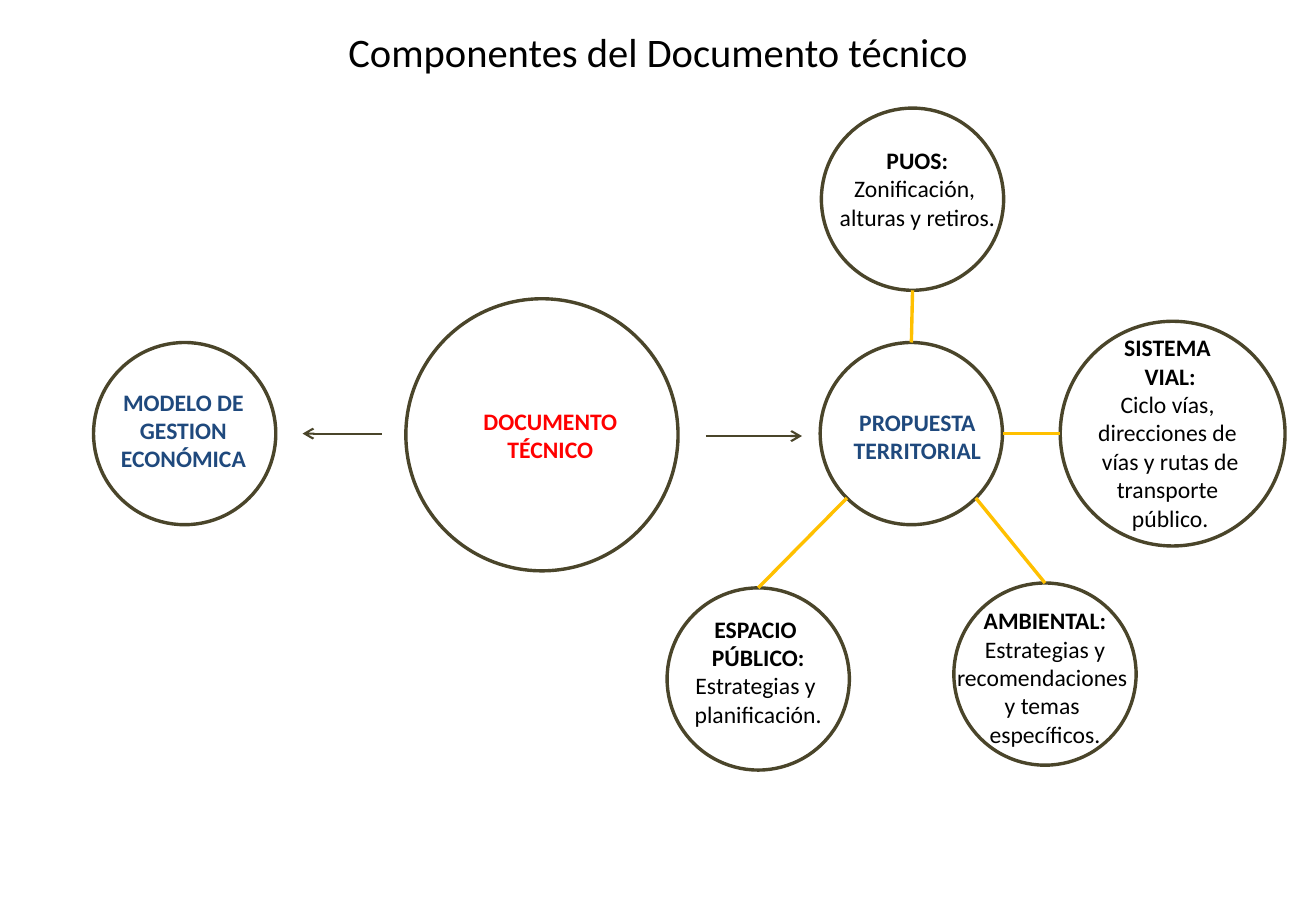
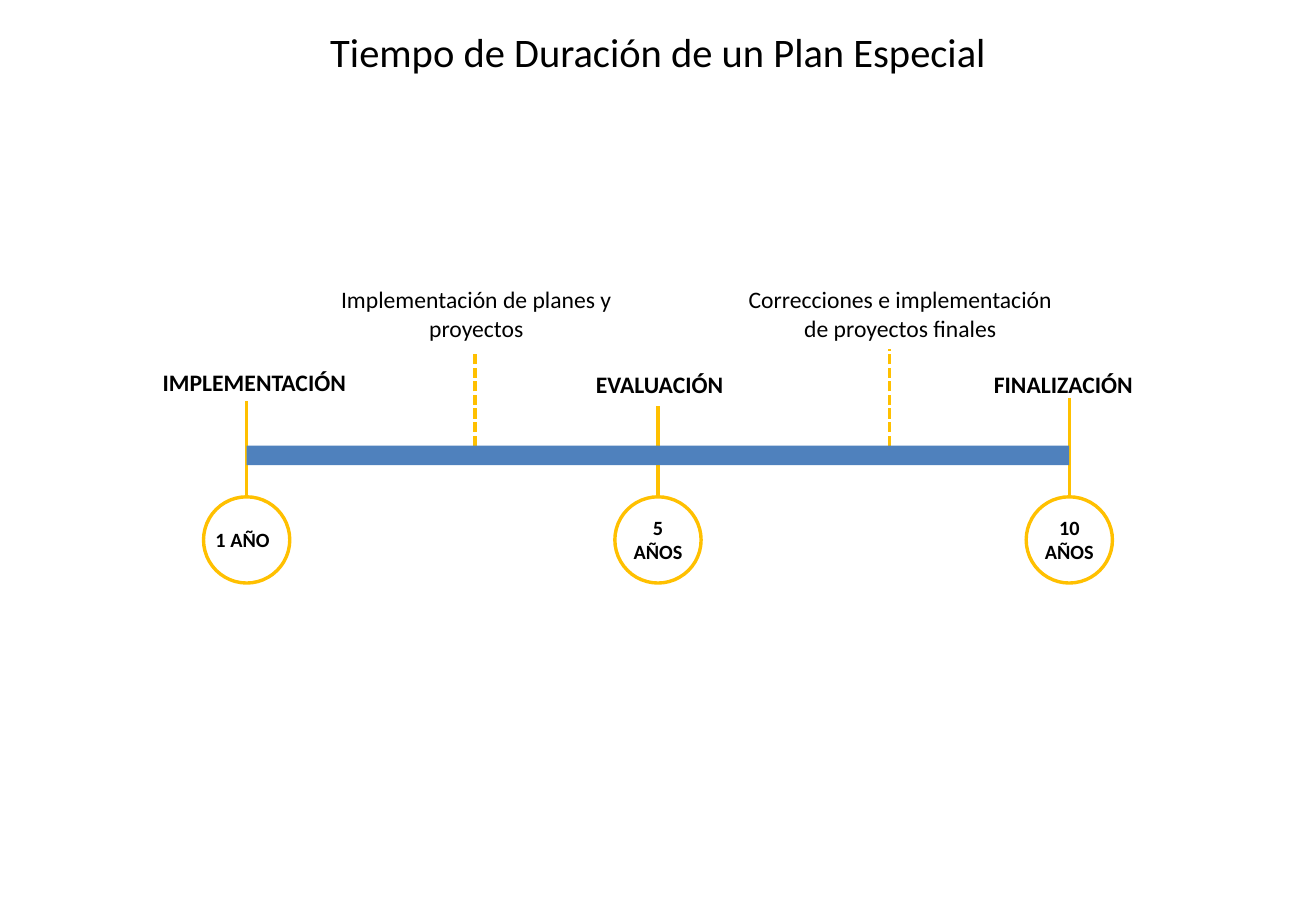
from collections import namedtuple
from math import cos, radians, sin

from lxml import etree
from pptx import Presentation
from pptx.dml.color import RGBColor
from pptx.enum import dml, shapes, text
from pptx.oxml import ns
from pptx.util import Inches, Pt

COLORS = {
    "black": "000000", "red": "FF0000", "navy": "1F497D",
    "olive": "4A452A", "gold": "FFC000", "blue": "4F81BD",
}
FONT = "Calibri"
CENTER, LEFT = text.PP_ALIGN.CENTER, text.PP_ALIGN.LEFT
Box = namedtuple("Box", "left top width height")
Circle = namedtuple("Circle", "x y diameter")
Node = namedtuple("Node", "dx dy diameter label_dx label_top label_width rows")

TITLE = Box(0.69, 0.16, 9.45, 0.52)
MAIN_NODES = [
    (Node(-3.04, 0.01, 2.24, 0.07, 0.84, 1.8, 2), ["DOCUMENTO TÉCNICO"], "red"),
    (Node(-5.98, 0, 1.5, -0.01, 0.32, 1.8, 3), ["MODELO DE GESTION ECONÓMICA"], "navy"),
]
HUB_NODE = Node(0, 0, 1.5, 0.05, 0.49, 1.8, 2)
SATELLITES = [
    (Node(0.01, -1.93, 1.5, 0.04, 0.26, 2.43, 3), 1, -90, 90,
     ["PUOS:", "Zonificación, ", "alturas y retiros."]),
    (Node(2.15, 0, 1.85, -0.02, 0.05, 2.05, 7), 2, 0, 180,
     ["SISTEMA ", "VIAL:", "Ciclo vías, ", "direcciones de ",
      "vías y rutas de transporte ", "público."]),
    (Node(-1.26, 2.02, 1.5, 0, 0.17, 2.43, 4), 2, 135, -90,
     ["ESPACIO ", "PÚBLICO:", "Estrategias y ", "planificación."]),
    (Node(1.1, 1.98, 1.5, 0, 0.14, 2.43, 5), 1, 45, -90,
     ["AMBIENTAL:", "Estrategias y recomendaciones ", "y temas ", "específicos."]),
]
ARROWS = [(-1.69, -0.9, 0.02), (-4.36, -5.01, 0)]


def color(name):
    return RGBColor.from_string(COLORS[name])


def add_label(page, box, lines, size=14, tone="black", bold_lines=0,
              align=CENTER, insets=(0.1, 0.05)):
    label = page.shapes.add_textbox(*map(Inches, box))
    frame = label.text_frame
    frame.text = "\n".join(lines)
    frame.word_wrap = True
    frame.auto_size = text.MSO_AUTO_SIZE.SHAPE_TO_FIT_TEXT
    frame.margin_left = frame.margin_right = Inches(insets[0])
    frame.margin_top = frame.margin_bottom = Inches(insets[1])
    for index, para in enumerate(frame.paragraphs):
        para.alignment = align
        for span in para.runs:
            span.font.name = FONT
            span.font.size = Pt(size)
            span.font.bold = index < bold_lines
            span.font.color.rgb = color(tone)


def add_circle(page, circle, tone):
    x, y, diameter = circle
    corner = (x - diameter / 2, y - diameter / 2, diameter, diameter)
    ring = page.shapes.add_shape(shapes.MSO_SHAPE.OVAL, *map(Inches, corner))
    ring.shadow.inherit = False
    ring.fill.background()
    ring.line.color.rgb = color(tone)
    ring.line.width = Pt(2)
    return ring


def add_line(page, start, end, tone="gold", width=2, dashed=False, arrow=False):
    line = page.shapes.add_connector(
        shapes.MSO_CONNECTOR.STRAIGHT, *map(Inches, (*start, *end)))
    line.line.color.rgb = color(tone)
    line.line.width = Pt(width)
    if dashed:
        line.line.dash_style = dml.MSO_LINE.SQUARE_DOT
    if arrow:
        outline = line.line._get_or_add_ln()
        etree.SubElement(outline, ns.qn("a:tailEnd"), type="arrow")
    etree.SubElement(line._element.spPr, ns.qn("a:effectLst"))
    return line


def add_page(deck, title):
    page = deck.slides.add_slide(deck.slide_layouts[6])
    add_label(page, TITLE, [title], size=24, insets=(0.12, 0.06))
    return page


def rim(circle, angle):
    radius = circle.diameter / 2
    return (circle.x + radius * cos(radians(angle)),
            circle.y + radius * sin(radians(angle)))


def add_node(page, x, y, node, lines, tone="black", bold_lines=1):
    circle = Circle(x + node.dx, y + node.dy, node.diameter)
    add_circle(page, circle, "olive")
    box = Box(circle.x + node.label_dx - node.label_width / 2,
              circle.y - node.diameter / 2 + node.label_top,
              node.label_width, 0.1 + 0.235 * node.rows)
    add_label(page, box, lines, tone=tone, bold_lines=bold_lines)
    return circle


def draw_components(page, x, y):
    for node, lines, tone in MAIN_NODES:
        add_node(page, x, y, node, lines, tone)
    for start, end, drop in ARROWS:
        add_line(page, (x + start, y + drop), (x + end, y + drop),
                 "olive", 1.25, arrow=True)
    hub = add_node(page, x, y, HUB_NODE, ["PROPUESTA", "TERRITORIAL"], "navy", 2)
    for node, bold_lines, hub_angle, node_angle, lines in SATELLITES:
        circle = add_node(page, x, y, node, lines, bold_lines=bold_lines)
        add_line(page, rim(hub, hub_angle), rim(circle, node_angle))


def draw_timeline(page, bar):
    milestones = [
        ("IMPLEMENTACIÓN", -0.79, -0.69, 1.79, -0.37, "1 AÑO", 1),
        ("EVALUACIÓN", -0.61, -0.67, 1.4, -0.33, "5 AÑOS", 2),
        ("FINALIZACIÓN", -0.72, -0.67, 1.51, -0.39, "10 AÑOS", 2),
    ]
    stages = [
        ("Implementación de planes y proyectos", 1.88, 0.01, 2.61, -0.77),
        ("Correcciones e implementación de proyectos finales", 5.29, 0.09, 2.8, -0.8),
    ]
    diameter = 0.71
    circle_y = bar.top + 0.42 + diameter / 2
    for index, (name, dx, dy, width, stem_top, years, rows) in enumerate(milestones):
        x = bar.left + index * bar.width / (len(milestones) - 1)
        ring = add_circle(page, Circle(x, circle_y, diameter), "gold")
        stem = add_line(page, (x, circle_y), (x, bar.top + stem_top))
        stem.begin_connect(ring, 0)
        add_label(page, Box(x + dx, bar.top + dy, width, 0.34), [name],
                  bold_lines=1, align=LEFT)
        height = 0.1 + 0.2 * rows
        add_label(page, Box(x - diameter / 2, circle_y - height / 2, diameter, height),
                  [years], size=12, bold_lines=1, align=LEFT if rows == 1 else CENTER)
    for name, dx, label_dx, width, stem_top in stages:
        x = bar.left + dx
        add_label(page, Box(x + label_dx - width / 2, bar.top - 1.37, width, 0.57), [name])
        add_line(page, (x, bar.top), (x, bar.top + stem_top), dashed=True)
    band = page.shapes.add_shape(shapes.MSO_SHAPE.RECTANGLE, *map(Inches, bar))
    band.shadow.inherit = False
    band.fill.solid()
    band.fill.fore_color.rgb = color("blue")
    band.line.fill.background()


def main():
    deck = Presentation()
    deck.slide_width, deck.slide_height = Inches(10.83), Inches(7.5)
    draw_components(add_page(deck, "Componentes del Documento técnico"), 7.5, 3.57)
    draw_timeline(add_page(deck, "Tiempo de Duración de un Plan Especial"),
                  Box(2.03, 3.67, 6.77, 0.16))
    deck.save("out.pptx")


if __name__ == "__main__":
    main()
